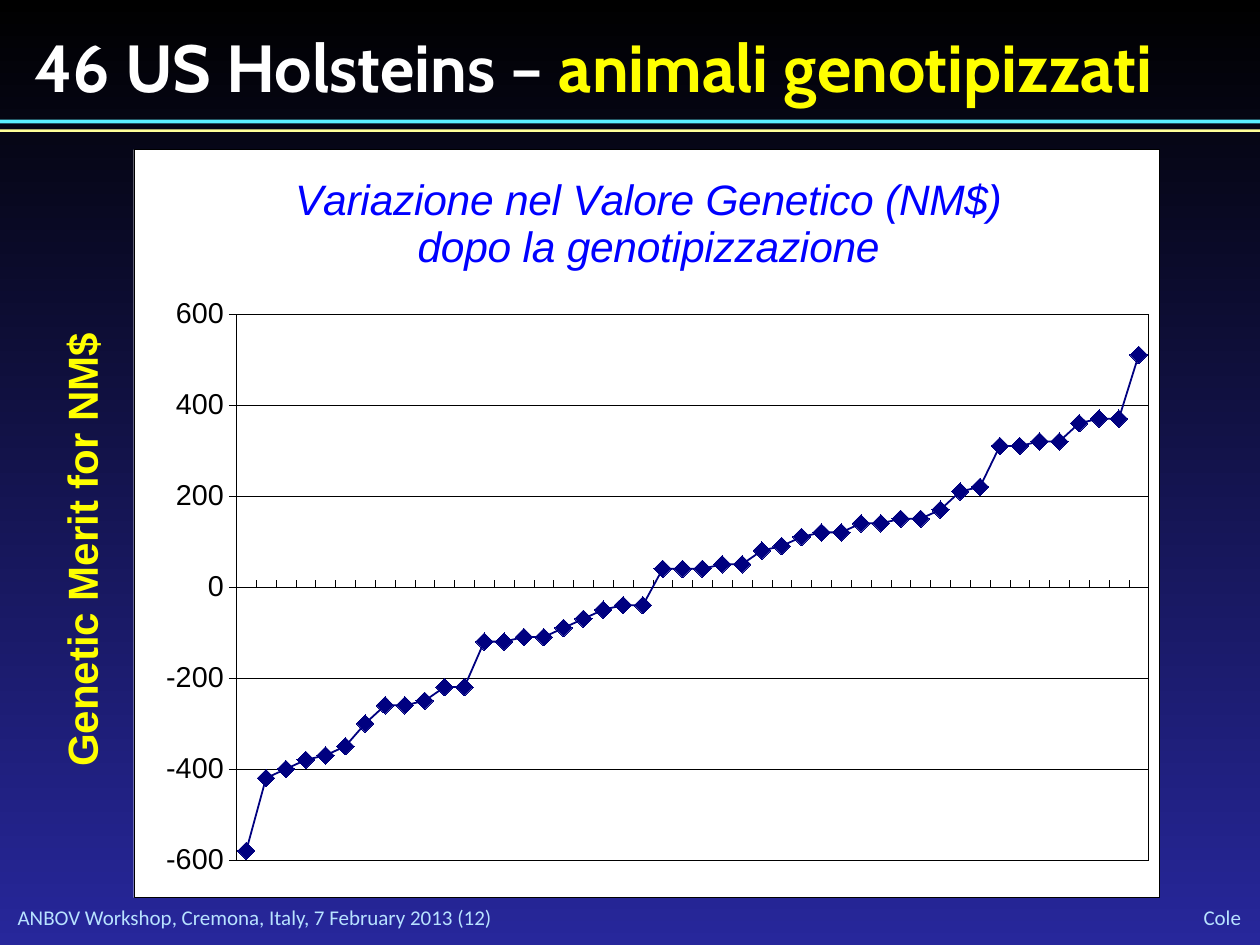
from lxml import etree
from pptx import Presentation
from pptx.chart.data import CategoryChartData as Data
from pptx.dml.color import RGBColor as RGB
from pptx.enum.chart import XL_CHART_TYPE as Kind, XL_MARKER_STYLE as Mark
from pptx.enum.chart import XL_TICK_LABEL_POSITION as Label, XL_TICK_MARK as Tick
from pptx.enum.shapes import MSO_SHAPE as Shape
from pptx.enum.text import MSO_ANCHOR as Anchor, PP_ALIGN as Align
from pptx.oxml import parse_xml
from pptx.oxml.ns import nsdecls, qn
from pptx.util import Inches, Pt

BLACK = RGB(0, 0, 0)
WHITE = RGB(255, 255, 255)
NIGHT = RGB(0x27, 0x27, 0x9B)
CYAN = RGB(0x5B, 0xEF, 0xFF)
CREAM = RGB(0xFF, 0xFF, 0x99)
PALE = RGB(0xB8, 0xE2, 0xFF)
YELLOW = RGB(255, 255, 0)
BLUE = RGB(0, 0, 255)
NAVY = RGB(0, 0, 0x80)

WIDE, HIGH = Inches(10), Inches(7.5)
MERIT = [-580, -420, -400, -380, -370, -350, -300, -260, -260, -250, -220, -220,
         -120, -120, -110, -110, -90, -70, -50, -40, -40, 40, 40, 40, 50, 50,
         80, 90, 110, 120, 120, 140, 140, 150, 150, 170, 210, 220, 310, 310,
         320, 320, 360, 370, 370, 510]


def place(box):
    """Turn a box in percent of the slide into lengths."""
    return [int(share * side / 100) for share, side in zip(box, (WIDE, HIGH) * 2)]


def style(font, size, color, name="Arial", bold=False, italic=False):
    font.name, font.size, font.bold, font.italic = name, Pt(size), bold, italic
    font.color.rgb = color


def write(frame, runs, align=Align.LEFT, anchor=Anchor.TOP, wrap=True, pad=None, **font):
    """Fill a frame with one paragraph of (text, color) runs."""
    frame.word_wrap, frame.vertical_anchor = wrap, anchor
    if pad is not None:
        frame.margin_left = frame.margin_right = pad
        frame.margin_top = frame.margin_bottom = pad
    para = frame.paragraphs[0]
    para.alignment = align
    for text, color in runs:
        run = para.add_run()
        run.text = text
        style(run.font, color=color, **font)


def pin(parent, index, inner=False, **spots):
    """Fix the place of a chart part, in shares of the chart."""
    for old in parent.findall(qn("c:layout")):
        parent.remove(old)
    layout = etree.Element(qn("c:layout"))
    manual = etree.SubElement(layout, qn("c:manualLayout"))
    marks = {"layoutTarget": "inner"} if inner else {}
    marks |= {"xMode": "edge", "yMode": "edge"} | spots
    for tag, val in marks.items():
        etree.SubElement(manual, qn("c:" + tag)).set("val", str(val))
    parent.insert(index, layout)


def panel():
    """White fill with a hairline black border."""
    return parse_xml(
        f'<c:spPr {nsdecls("c", "a")}><a:solidFill><a:srgbClr val="{WHITE}"/></a:solidFill>'
        f'<a:ln w="{Pt(0.25)}"><a:solidFill><a:srgbClr val="{BLACK}"/></a:solidFill></a:ln></c:spPr>')


def hair(line, color=BLACK, width=0.25):
    line.color.rgb, line.width = color, Pt(width)


def backdrop(slide):
    fill = slide.background.fill
    fill.gradient()
    fill.gradient_angle = 270
    for stop, color, spot in zip(fill.gradient_stops, (BLACK, NIGHT), (0, 1)):
        stop.color.rgb, stop.position = color, spot


def header(slide, box):
    title = slide.shapes.title
    title.left, title.top, title.width, title.height = place(box)
    write(title.text_frame, [("46 US Holsteins – ", WHITE), ("animali genotipizzati", YELLOW)],
          size=38, name="Cabin", bold=True)


def rule(slide, box, color):
    bar = slide.shapes.add_shape(Shape.RECTANGLE, *place(box))
    bar.shadow.inherit = False
    bar.fill.solid()
    bar.fill.fore_color.rgb = color
    bar.line.fill.background()


def label(slide, box, text, color, turn=0, **look):
    item = slide.shapes.add_textbox(*place(box))
    item.rotation = turn
    write(item.text_frame, [(text, color)], **look)


def axes(chart):
    cat, val = chart.category_axis, chart.value_axis
    cat.tick_label_position = Label.NONE
    cat.major_tick_mark, val.major_tick_mark = Tick.INSIDE, Tick.OUTSIDE
    cat.minor_tick_mark = val.minor_tick_mark = Tick.NONE
    val.minimum_scale, val.maximum_scale, val.major_unit = -600, 600, 200
    val.has_major_gridlines = True
    style(val.tick_labels.font, 16.4, BLACK)
    for line in (cat.format.line, val.format.line, val.major_gridlines.format.line):
        hair(line)


def merit_chart(slide, box):
    data = Data()
    data.categories = [str(n + 1) for n in range(len(MERIT))]
    data.add_series("Series 1", MERIT)
    chart = slide.shapes.add_chart(Kind.LINE_MARKERS, *place(box), data).chart
    chart.has_legend = False
    style(chart.font, 16.4, BLACK)
    axes(chart)

    plot = chart.plots[0]
    plot.vary_by_categories = False
    line = plot.series[0]
    line.smooth = False
    hair(line.format.line, NAVY, 1.02)
    line.marker.style, line.marker.size = Mark.DIAMOND, 10
    line.marker.format.fill.solid()
    line.marker.format.fill.fore_color.rgb = NAVY
    hair(line.marker.format.line, NAVY)

    chart.has_title = True
    title = chart.chart_title
    write(title.text_frame, [("Variazione nel Valore Genetico (NM$) dopo la genotipizzazione", BLUE)],
          align=Align.CENTER, size=24.3, italic=True)
    title.include_in_layout = False
    pin(title._element, 1, x=0.15, y=0.02)

    root = chart._chartSpace
    area = root.chart.plotArea
    pin(area, 0, inner=True, x=0.1, y=0.22, w=0.89, h=0.73)
    area.append(panel())
    root.chart.addnext(panel())


def main():
    deck = Presentation()
    deck.slide_width, deck.slide_height = WIDE, HIGH
    slide = deck.slides.add_slide(deck.slide_layouts[5])
    backdrop(slide)
    header(slide, (1.7, 2.13, 98.3, 8.53))
    rule(slide, (0, 12.67, 100, 0.4), CYAN)
    rule(slide, (0, 13.7, 100, 0.27), CREAM)
    merit_chart(slide, (10.6, 15.8, 81.4, 79.2))
    label(slide, (-11.8, 54.8, 36.5, 6.67), "Genetic Merit for NM$", YELLOW,
          turn=270, wrap=False, size=24, bold=True)
    foot = dict(size=12, name="Calibri", anchor=Anchor.MIDDLE, pad=0)
    label(slide, (1.4, 95.7, 52.2, 2.7), "ANBOV Workshop, Cremona, Italy, 7 February 2013 (12)", PALE, **foot)
    label(slide, (87.2, 95.7, 11.3, 2.7), "Cole", PALE, align=Align.RIGHT, **foot)
    deck.save("out.pptx")


if __name__ == "__main__":
    main()
